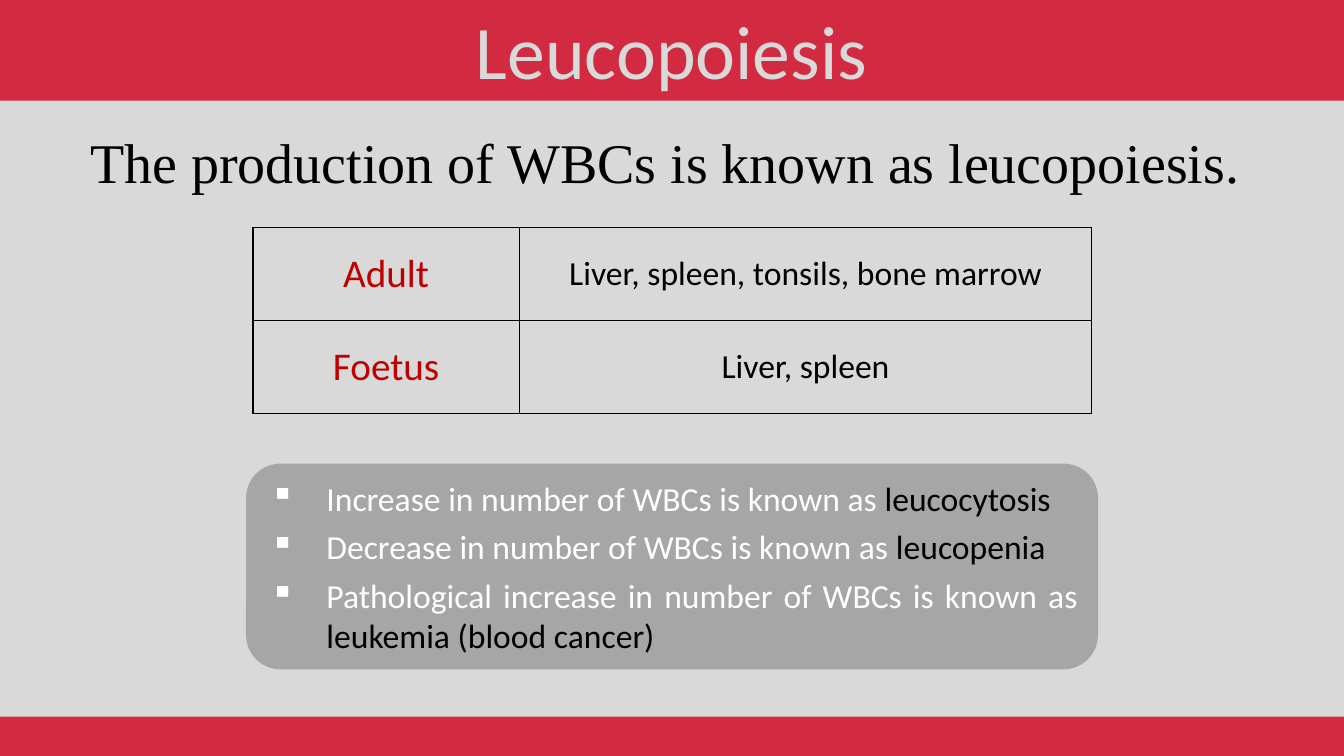
import pptx
import pptx.util
import pptx.dml.color
import pptx.enum.shapes
import pptx.enum.text
import pptx.oxml
import pptx.oxml.ns

Inches = pptx.util.Inches
Pt = pptx.util.Pt
Shape = pptx.enum.shapes.MSO_SHAPE
Align = pptx.enum.text.PP_ALIGN
Anchor = pptx.enum.text.MSO_ANCHOR
RED, GREY, BLACK = "D22B41", "D9D9D9", "000000"
NS = pptx.oxml.ns.nsdecls("a")


def paint(target, colour):
    """Give a fill a solid colour."""
    target.solid()
    target.fore_color.rgb = pptx.dml.color.RGBColor.from_string(colour)


def style(run, size, colour, font="Calibri"):
    run.font.size = Pt(size)
    run.font.name = font
    paint(run.font.fill, colour)


presentation = pptx.Presentation()
presentation.slide_width = Inches(13.33)
presentation.slide_height = Inches(7.5)
slide = presentation.slides.add_slide(presentation.slide_layouts[6])
paint(slide.background.fill, GREY)

# Red bands at top and bottom
for top, height in ((0, 1), (7.11, 0.4)):
    band = slide.shapes.add_shape(
        Shape.RECTANGLE, 0, Inches(top), Inches(13.33), Inches(height))
    paint(band.fill, RED)
    band.line.fill.background()
    band.shadow.inherit = False

# Title and definition
headings = (
    ("Leucopoiesis", (4.6, -0.01, 4.12, 1.01), False, 54, GREY, "Calibri"),
    ("The production of WBCs is known as leucopoiesis. ",
     (0.13, 1.22, 13.07, 0.77), True, 40, BLACK, "Times New Roman"),
)
for wording, place, wraps, size, colour, font in headings:
    heading = slide.shapes.add_textbox(*map(Inches, place)).text_frame
    heading.word_wrap = wraps
    heading.auto_size = pptx.enum.text.MSO_AUTO_SIZE.SHAPE_TO_FIT_TEXT
    heading.text = wording
    heading.paragraphs[0].alignment = Align.CENTER
    heading_run = heading.paragraphs[0].runs[0]
    style(heading_run, size, colour, font)

# Soft shadow behind the definition's letters
heading_run.font.fill  # the fill comes before the effect in the run properties
properties = heading_run.font._element if hasattr(heading_run.font, "_element") else heading_run._r.rPr
properties.find(pptx.oxml.ns.qn("a:solidFill")).addnext(pptx.oxml.parse_xml(
    f'<a:effectLst {NS}><a:outerShdw blurRad="38100" dist="38100" dir="2700000" algn="tl">'
    '<a:srgbClr val="000000"><a:alpha val="43000"/></a:srgbClr></a:outerShdw></a:effectLst>'))

# Definitions panel
panel = slide.shapes.add_shape(
    Shape.ROUNDED_RECTANGLE, Inches(2.44), Inches(4.6), Inches(8.45), Inches(2.04))
paint(panel.fill, "A6A6A6")
panel.line.fill.background()
panel.shadow.inherit = False
definitions = panel.text_frame
definitions.word_wrap = True
definitions.vertical_anchor = Anchor.MIDDLE
terms = (
    ("Increase in number of WBCs is known as ", "leucocytosis", 6),
    ("Decrease in number of WBCs is known as ", "leucopenia", 6),
    ("Pathological increase in number of WBCs is known as ",
     "leukemia (blood cancer) ", 12),
)
for index, (meaning, term, gap) in enumerate(terms):
    line = definitions.add_paragraph() if index else definitions.paragraphs[0]
    line.alignment = Align.JUSTIFY
    line.space_after = Pt(gap)
    for wording, colour in ((meaning, "FFFFFF"), (term, BLACK)):
        run = line.add_run()
        run.text = wording
        style(run, 24, colour)
    indents = line._p.get_or_add_pPr()
    indents.set("marL", str(Inches(0.6)))
    indents.set("indent", str(Inches(-0.56)))
    indents.append(pptx.oxml.parse_xml(f'<a:buChar {NS} char="▪"/>'))

# Table of production sites
sites = (("Adult", "Liver, spleen, tonsils, bone marrow"), ("Foetus", "Liver, spleen"))
site_table = slide.shapes.add_table(
    2, 2, Inches(2.51), Inches(2.26), Inches(8.32), Inches(1.84)).table
site_table.first_row = False
site_table.horz_banding = False
columns = ((2.64, 28, "C00000"), (5.68, 24, BLACK))
for column, (width, size, colour) in enumerate(columns):
    site_table.columns[column].width = Inches(width)
    for row in range(2):
        site_table.rows[row].height = Inches(0.92)
        cell = site_table.cell(row, column)
        cell.text = sites[row][column]
        cell.vertical_anchor = Anchor.MIDDLE
        cell.text_frame.paragraphs[0].alignment = Align.CENTER
        style(cell.text_frame.paragraphs[0].runs[0], size, colour)
        borders = cell._tc.get_or_add_tcPr()
        for side in "LRTB":
            borders.append(pptx.oxml.parse_xml(
                f'<a:ln{side} {NS} w="{Pt(1)}"><a:solidFill>'
                f'<a:srgbClr val="{BLACK}"/></a:solidFill></a:ln{side}>'))
        cell.fill.background()

presentation.save("out.pptx")
